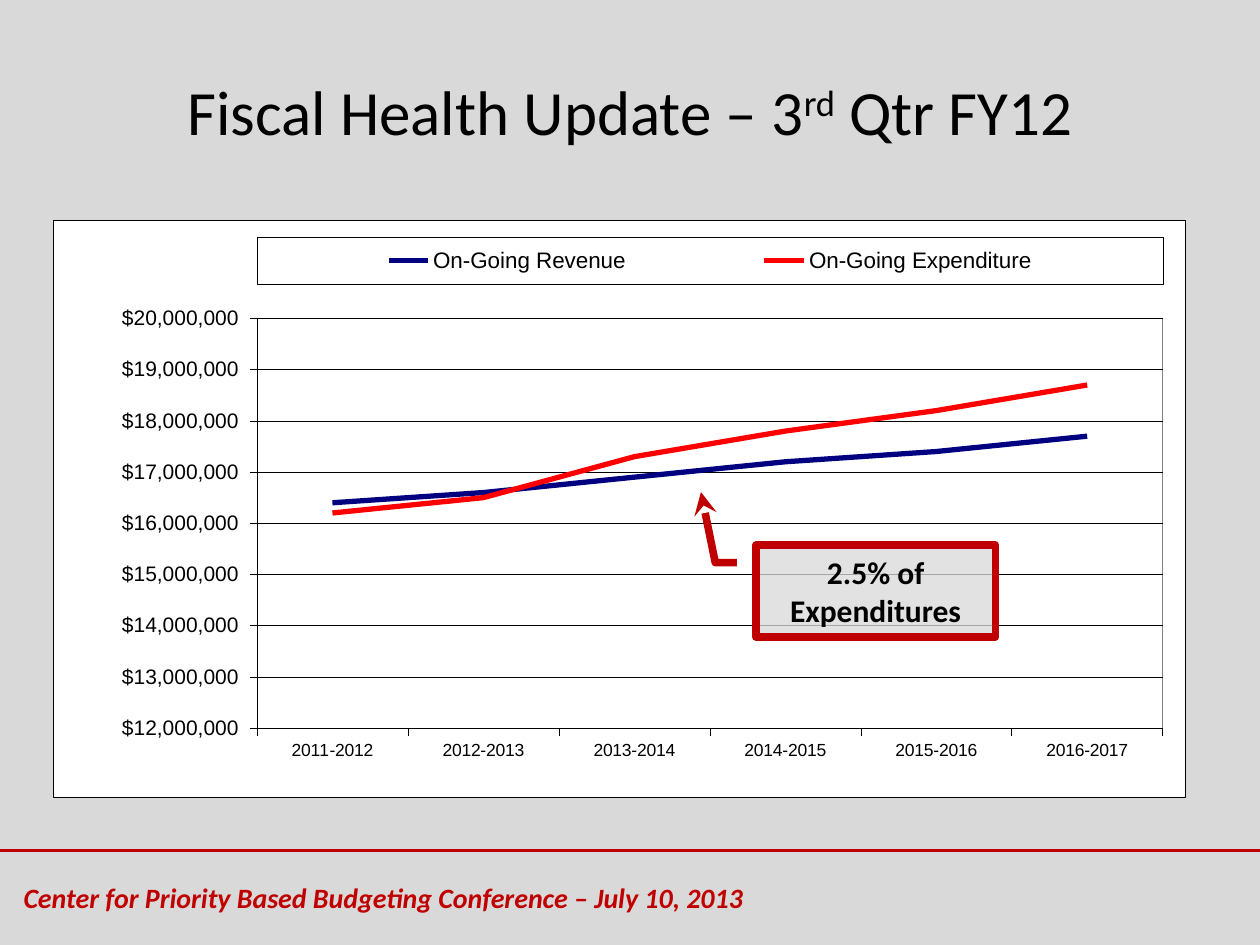
from dataclasses import dataclass

from lxml.etree import SubElement
from pptx import Presentation
from pptx.chart.data import CategoryChartData
from pptx.dml.color import RGBColor
from pptx.enum.chart import XL_CHART_TYPE as Chart, XL_LEGEND_POSITION as Side
from pptx.enum.chart import XL_TICK_MARK as Tick
from pptx.enum.shapes import MSO_CONNECTOR as Link, MSO_SHAPE as Shape
from pptx.enum.text import MSO_ANCHOR as Anchor, MSO_AUTO_SIZE as Fit, PP_ALIGN as Align
from pptx.oxml import parse_xml
from pptx.oxml.ns import nsdecls, qn
from pptx.util import Inches, Pt


@dataclass(frozen=True)
class Theme:
    back: str = "D9D9D9"
    ink: str = "000000"
    paper: str = "FFFFFF"
    frame: str = "808080"
    accent: str = "C00000"
    revenue: str = "000080"
    spend: str = "FF0000"
    body: str = "Calibri"
    figures: str = "Arial"
    title: float = 36
    note: float = 18
    footer: float = 16
    legend: float = 12.8
    values: float = 12
    years: float = 10
    hair: float = 0.25


THEME = Theme()
WIDE, HIGH = Inches(10), Inches(7.5)
YEARS = [f"{year}-{year + 1}" for year in range(2011, 2017)]
MILLION = 1_000_000
SERIES = [
    ("On-Going Revenue", THEME.revenue, [16.4, 16.6, 16.9, 17.2, 17.4, 17.7]),
    ("On-Going Expenditure", THEME.spend, [16.2, 16.5, 17.3, 17.8, 18.2, 18.7]),
]
MONEY = '"$"#,##0_);[Red]\\("$"#,##0\\)'


def place(x, y, w, h):
    """Turn shares of the slide into lengths."""
    return int(x * WIDE), int(y * HIGH), int(w * WIDE), int(h * HIGH)


def style(font, size, face, color=THEME.ink, bold=False, italic=False):
    font.size, font.name = Pt(size), face
    font.bold, font.italic = bold, italic
    font.color.rgb = RGBColor.from_string(color)


def stroke(line, color, width):
    line.color.rgb = RGBColor.from_string(color)
    line.width = Pt(width)


def write(frame, parts, align, size, **look):
    """Fill one paragraph with (text, raise in percent) parts."""
    frame.word_wrap = True
    frame.vertical_anchor = Anchor.MIDDLE
    para = frame.paragraphs[0]
    para.alignment = align
    for text, lift in parts:
        run = para.add_run()
        run.text = text
        style(run.font, size, THEME.body, **look)
        if lift:
            run._r.get_or_add_rPr().set("baseline", str(lift * 1000))


def add_text(slide, box, *args, **look):
    write(slide.shapes.add_textbox(*place(*box)).text_frame, *args, **look)


def add_rule(slide, y):
    rule = slide.shapes.add_connector(Link.STRAIGHT, 0, int(y * HIGH), WIDE, int(y * HIGH))
    stroke(rule.line, THEME.accent, 2)
    SubElement(rule._element.spPr, qn("a:effectLst"))


def layout(x, y, w, h, inner=False):
    """Build a manual chart layout from shares of the chart's size."""
    items = [("layoutTarget", "inner")] if inner else []
    items += [("xMode", "edge"), ("yMode", "edge"), ("x", x), ("y", y), ("w", w), ("h", h)]
    body = "".join(f'<c:{tag} val="{value}"/>' for tag, value in items)
    return parse_xml(f'<c:layout {nsdecls("c")}><c:manualLayout>{body}'
                     "</c:manualLayout></c:layout>")


def panel(color):
    """Build a white fill with a thin border for a part of the chart."""
    return parse_xml(
        f'<c:spPr {nsdecls("c", "a")}><a:solidFill><a:srgbClr val="{THEME.paper}"/></a:solidFill>'
        f'<a:ln w="{Pt(THEME.hair)}"><a:solidFill><a:srgbClr val="{color}"/></a:solidFill></a:ln>'
        "</c:spPr>")


def drop(parent, tag):
    for node in parent.findall(qn(tag)):
        parent.remove(node)


def set_axis(axis, size):
    axis.major_tick_mark, axis.minor_tick_mark = Tick.OUTSIDE, Tick.NONE
    stroke(axis.format.line, THEME.ink, THEME.hair)
    style(axis.tick_labels.font, size, THEME.figures)


def set_scale(axis, low, high):
    axis.minimum_scale, axis.maximum_scale = low * MILLION, high * MILLION
    axis.major_unit = MILLION
    axis.has_major_gridlines = True
    stroke(axis.major_gridlines.format.line, THEME.ink, THEME.hair)
    axis.tick_labels.number_format = MONEY
    axis.tick_labels.number_format_is_linked = False


def set_legend(chart, box):
    chart.has_legend = True
    legend = chart.legend
    legend.position = Side.RIGHT
    legend.include_in_layout = False
    style(legend.font, THEME.legend, THEME.figures)
    node = legend._element
    drop(node, "c:layout")
    node.find(qn("c:legendPos")).addnext(layout(*box))
    node.find(qn("c:overlay")).addnext(panel(THEME.ink))


def set_panels(chart, box):
    space = chart._chartSpace
    space.find(qn("c:txPr")).addprevious(panel(THEME.ink))
    plot = space.chart.plotArea
    drop(plot, "c:layout")
    plot.insert(0, layout(*box, inner=True))
    plot.append(panel(THEME.frame))


def add_trend(slide, box):
    data = CategoryChartData(number_format=MONEY)
    data.categories = YEARS
    for name, _, values in SERIES:
        data.add_series(name, [round(value * MILLION) for value in values])
    chart = slide.shapes.add_chart(Chart.LINE, *place(*box), data).chart
    chart.has_title = False
    style(chart.font, 9.5, THEME.figures)
    chart.plots[0].vary_by_categories = False
    for line, (_, color, _) in zip(chart.plots[0].series, SERIES):
        line.smooth = False
        stroke(line.format.line, color, 3)
    set_axis(chart.category_axis, THEME.years)
    set_axis(chart.value_axis, THEME.values)
    set_scale(chart.value_axis, 12, 20)
    set_legend(chart, (0.18, 0.03, 0.8, 0.08))
    set_panels(chart, (0.18, 0.17, 0.8, 0.71))


def add_note(slide, box, text, bends):
    note = slide.shapes.add_shape(Shape.LINE_CALLOUT_2, *place(*box))
    note.shadow.inherit = False
    for index, bend in enumerate(bends):
        note.adjustments[index] = bend
    note.fill.solid()
    note.fill.fore_color.rgb = RGBColor.from_string(THEME.back)
    tint = note._element.spPr.find(qn("a:solidFill"))[0]
    SubElement(tint, qn("a:alpha"), val="76000")
    stroke(note.line, THEME.accent, 4.33)
    SubElement(note.line._get_or_add_ln(), qn("a:tailEnd"), type="stealth")
    write(note.text_frame, [(text, 0)], Align.CENTER, THEME.note, bold=True)
    note.text_frame.auto_size = Fit.SHAPE_TO_FIT_TEXT


def main():
    deck = Presentation()
    deck.slide_width, deck.slide_height = WIDE, HIGH
    slide = deck.slides.add_slide(deck.slide_layouts[6])
    slide.background.fill.solid()
    slide.background.fill.fore_color.rgb = RGBColor.from_string(THEME.back)

    add_rule(slide, 0.9)
    add_text(slide, (0, 0.923, 0.6, 0.053),
             [("Center for Priority Based Budgeting Conference – July 10, 2013", 0)],
             Align.RIGHT, THEME.footer, color=THEME.accent, bold=True, italic=True)
    add_text(slide, (0.05, 0.033, 0.9, 0.167),
             [("Fiscal Health Update – 3", 0), ("rd", 30), (" Qtr FY12", 0)],
             Align.CENTER, THEME.title)
    add_trend(slide, (0.042, 0.233, 0.899, 0.611))
    add_note(slide, (0.6, 0.577, 0.19, 0.097), "2.5% of Expenditures",
             (0.19, -0.08, 0.19, -0.17, -0.58, -0.23))
    deck.save("out.pptx")


if __name__ == "__main__":
    main()
